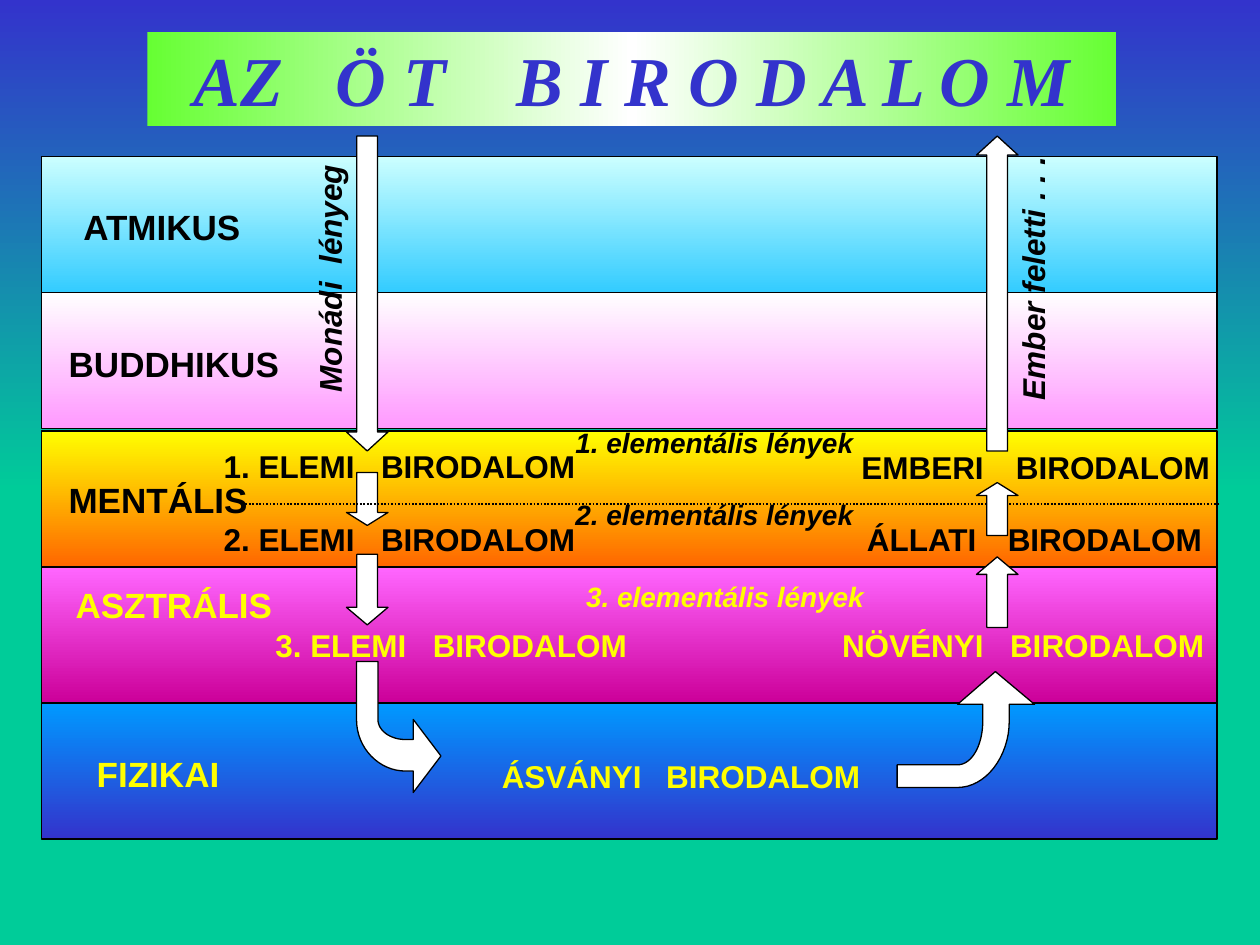
import copy

import pptx
import pptx.dml.color
import pptx.enum.dml
import pptx.enum.shapes
import pptx.enum.text
import pptx.oxml
import pptx.oxml.ns
import pptx.util

Inches = pptx.util.Inches
Pt = pptx.util.Pt
SHAPE = pptx.enum.shapes.MSO_SHAPE
color = pptx.dml.color.RGBColor.from_string
BLACK, WHITE, YELLOW, INDIGO = "000000", "FFFFFF", "FFFF00", "3333CC"


def paint_gradient(fill, element, stops, angle=270):
    """Fill with (position, colour) stops; element holds the fill's XML."""
    fill.gradient()
    fill.gradient_angle = angle
    stop_list = next(element.iter(pptx.oxml.ns.qn("a:gsLst")))
    while len(stop_list) < len(stops):
        stop_list.append(copy.deepcopy(stop_list[-1]))
    for stop, (position, shade) in zip(fill.gradient_stops, stops):
        stop.position = position
        stop.color.rgb = color(shade)


def write_line(box, text, size, shade, font="Arial", italic=False, gaps=()):
    """Write one centred line; each "|" is a space widened by the next gap, in points."""
    frame = box.text_frame
    frame.word_wrap = True
    frame.margin_left = frame.margin_right = Inches(0.05)
    para = frame.paragraphs[0]
    para.alignment = pptx.enum.text.PP_ALIGN.CENTER
    words = text.split("|")
    pieces = [(words[0], 0)]
    for gap, word in zip(gaps, words[1:]):
        pieces += [(" ", gap), (word, 0)]
    for piece, spacing in pieces:
        span = para.add_run()
        span.text = piece
        span.font.name = font
        span.font.size = Pt(size)
        span.font.bold = True
        span.font.italic = italic
        span.font.color.rgb = color(shade)
        if spacing:
            span.font._element.set("spc", str(round(spacing * 100)))


deck = pptx.Presentation()
deck.slide_width, deck.slide_height = Inches(10), Inches(7.5)
page = deck.slides.add_slide(deck.slide_layouts[6])
shapes = page.shapes
paint_gradient(page.background.fill, page.element,
               [(0, INDIGO), (0.52, "00CC99"), (1, "00CC99")])

# Planes, from the highest to the lowest
bands = [
    (1.24, "CCFFFF", "33CCFF"),
    (2.32, "FFFFFF", "FF99FF"),
    (3.42, "FFFF00", "FF6600"),
    (4.5, "FF66FF", "CC0099"),
    (5.58, "0099FF", INDIGO),
]
for top, upper, lower in bands:
    band = shapes.add_shape(SHAPE.RECTANGLE, Inches(0.33), Inches(top), Inches(9.33), Inches(1.08))
    band.shadow.inherit = False
    paint_gradient(band.fill, band.element, [(0, upper), (1, lower)])
    band.line.color.rgb = color(BLACK)
    band.line.width = Pt(0.75)

# Descent on the left, ascent on the right
descent, ascent = (SHAPE.DOWN_ARROW, 2.75), (SHAPE.UP_ARROW, 7.75)
white_shapes = []
for kind, left in (descent, ascent):
    for top, height, head in [(1.08, 2.5, 0.458), (3.75, 0.42, 0.312), (4.4, 0.56, 0.422)]:
        if kind == SHAPE.UP_ARROW and top == 3.75:
            top = 3.83
        elif kind == SHAPE.UP_ARROW and top == 4.4:
            top = 4.42
        arrow = shapes.add_shape(kind, Inches(left), Inches(top), Inches(0.33), Inches(height))
        arrow.adjustments[0], arrow.adjustments[1] = 0.5, head
        white_shapes.append(arrow)
first_ascent = white_shapes[3]

# Bent arrows: a step is one point, or two control points and an end point
bent_arrows = [
    [[(3.5, 6)], [(3.28, 6.29)], [(3.28, 6.12)], [(3.22, 6.12)],
     [(3.01, 6.12), (2.83, 5.94), (2.83, 5.71)], [(2.83, 5.25)], [(3, 5.25)], [(3, 5.71)],
     [(3, 5.8), (3.1, 5.87), (3.22, 5.87)], [(3.28, 5.87)], [(3.28, 5.71)]],
    [[(7.9, 5.33)], [(8.21, 5.59)], [(8.01, 5.59)], [(8.01, 5.72)],
     [(8.01, 6.01), (7.82, 6.25), (7.6, 6.25)], [(7.12, 6.25)], [(7.12, 6.07)], [(7.6, 6.07)],
     [(7.71, 6.07), (7.8, 5.92), (7.8, 5.72)], [(7.8, 5.59)], [(7.6, 5.59)]],
]
CURVE_STEPS = 16
for steps in bent_arrows:
    points = []
    for step in steps:
        if len(step) == 1:
            points += step
            continue
        curve = [points[-1]] + step
        for index in range(1, CURVE_STEPS + 1):
            t = index / CURVE_STEPS
            weights = [(1 - t) ** 3, 3 * t * (1 - t) ** 2, 3 * t ** 2 * (1 - t), t ** 3]
            points.append(tuple(sum(w * point[axis] for w, point in zip(weights, curve))
                                for axis in (0, 1)))
    outline = [(Inches(x), Inches(y)) for x, y in points]
    builder = shapes.build_freeform(*outline[0])
    builder.add_line_segments(outline[1:], close=True)
    white_shapes.append(builder.convert_to_shape())

for arrow in white_shapes:
    arrow.shadow.inherit = False
    arrow.fill.solid()
    arrow.fill.fore_color.rgb = color(WHITE)
    arrow.line.color.rgb = color(BLACK)
    arrow.line.width = Pt(0.75)

# The dotted divider runs over the descent and behind the ascent
divider = shapes.add_connector(pptx.enum.shapes.MSO_CONNECTOR.STRAIGHT,
                               Inches(1.92), Inches(4), Inches(9.67), Inches(4))
divider.line.color.rgb = color(BLACK)
divider.line.width = Pt(1)
divider.line.dash_style = pptx.enum.dml.MSO_LINE.ROUND_DOT
divider.element.spPr.append(pptx.oxml.parse_xml(
    "<a:effectLst %s/>" % pptx.oxml.ns.nsdecls("a")))
first_ascent.element.addprevious(divider.element)

# left, top, width, text, size, colour, italic, rotation, gaps
labels = [
    (0.48, 1.58, 1.61, "ATMIKUS", 20, BLACK, False, 0, ()),
    (0.42, 2.67, 1.92, "BUDDHIKUS", 20, BLACK, False, 0, ()),
    (0.42, 3.75, 1.67, "MENTÁLIS", 20, BLACK, False, 0, ()),
    (0.42, 4.58, 1.92, "ASZTRÁLIS", 20, YELLOW, False, 0, ()),
    (0.42, 5.92, 1.67, "FIZIKAI", 20, YELLOW, False, 0, ()),
    (1.67, 3.5, 3, "1. ELEMI|BIRODALOM", 18, BLACK, False, 0, (10,)),
    (1.67, 4.08, 3, "2. ELEMI|BIRODALOM", 18, BLACK, False, 0, (10,)),
    (1.67, 4.92, 3.82, "3. ELEMI|BIRODALOM", 18, YELLOW, False, 0, (10,)),
    (3.81, 5.96, 3.19, "ÁSVÁNYI|BIRODALOM", 18, YELLOW, False, 0, (8.9,)),
    (6.58, 4.92, 3.08, "NÖVÉNYI|BIRODALOM", 18, YELLOW, False, 0, (10,)),
    (6.75, 4.08, 2.92, "ÁLLATI|BIRODALOM", 18, BLACK, False, 0, (12.8,)),
    (6.69, 3.51, 3.06, "EMBERI|BIRODALOM", 18, BLACK, False, 0, (13.3,)),
    (4.42, 3.33, 2.5, "1. elementális lények", 16, BLACK, True, 0, ()),
    (4.42, 3.9, 2.5, "2. elementális lények", 16, BLACK, True, 0, ()),
    (4.42, 4.55, 2.67, "3. elementális lények", 16, YELLOW, True, 0, ()),
    (1.49, 2.01, 2.25, "Monádi|lényeg", 18, BLACK, True, 270, (5,)),
    (7.07, 2.01, 2.25, "Ember feletti . . .", 18, BLACK, True, 270, ()),
]
heights = {20: 0.43, 18: 0.4, 16: 0.37}
for left, top, width, text, size, shade, italic, rotation, gaps in labels:
    box = shapes.add_textbox(Inches(left), Inches(top), Inches(width), Inches(heights[size]))
    box.rotation = rotation
    write_line(box, text, size, shade, italic=italic, gaps=gaps)
    box.text_frame.auto_size = pptx.enum.text.MSO_AUTO_SIZE.SHAPE_TO_FIT_TEXT

title = shapes.add_shape(SHAPE.RECTANGLE, Inches(1.17), Inches(0.25), Inches(7.69), Inches(0.75))
title.shadow.inherit = False
paint_gradient(title.fill, title.element, [(0, "66FF33"), (0.5, WHITE), (1, "66FF33")], 0)
title.line.fill.background()
title.text_frame.vertical_anchor = pptx.enum.text.MSO_ANCHOR.MIDDLE
write_line(title, "AZ|Ö T|B I R O D A L O M", 40, INDIGO,
           font="Times New Roman", italic=True, gaps=(20, 30))

deck.save("out.pptx")
